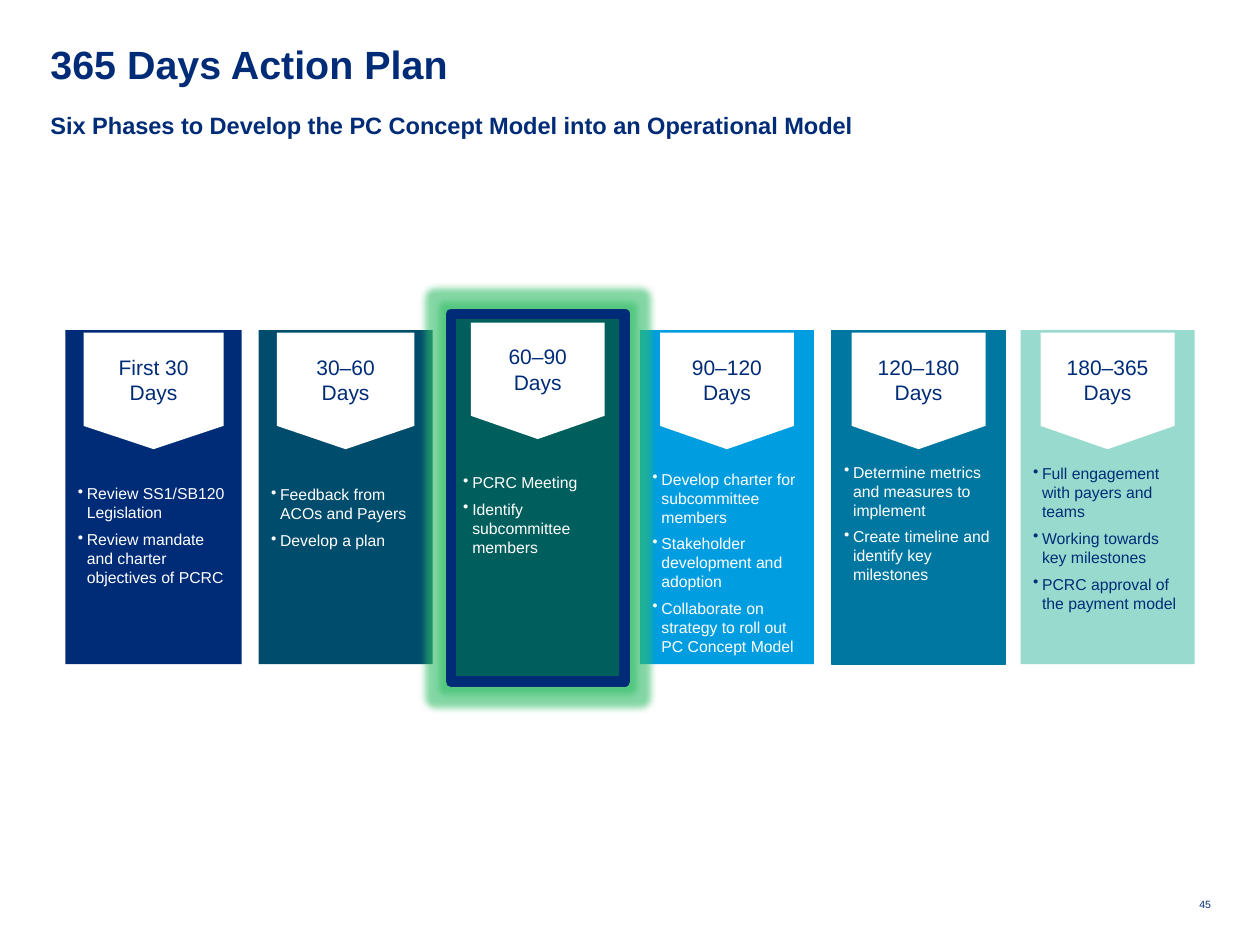
from pptx import Presentation
from pptx.dml.color import RGBColor
from pptx.enum.shapes import MSO_SHAPE
from pptx.enum.text import MSO_ANCHOR, PP_ALIGN
from pptx.oxml import parse_xml
from pptx.oxml.ns import nsdecls, qn
from pptx.util import Pt

RECT = MSO_SHAPE.RECTANGLE
CHEVRON = MSO_SHAPE.FLOWCHART_OFFPAGE_CONNECTOR
TOP, MIDDLE = MSO_ANCHOR.TOP, MSO_ANCHOR.MIDDLE
LEFT, CENTER, RIGHT = PP_ALIGN.LEFT, PP_ALIGN.CENTER, PP_ALIGN.RIGHT

COLORS = {
    "navy": "002C77", "slate": "004C6C", "green": "005E5D", "sky": "009DE0",
    "teal": "0077A0", "mint": "98DBCE", "white": "FFFFFF", "glow": "33BD68",
}
FONT = "Arial"
PANEL_TOP, PANEL_H = 188.7, 190.8
HIGHLIGHT_TOP, HIGHLIGHT_H = 179.3, 210.2
CHEVRON_H = 66.6

# left, width, colour, chevron width, top of text in panel, heading, bullets
PHASES = [
    (37.4, 100.8, "navy", 80, 88, "First 30\vDays",
     ["Review SS1/SB120 Legislation",
      "Review mandate and charter objectives of PCRC"]),
    (147.8, 99.4, "slate", 78.5, 88.5, "30–60\vDays",
     ["Feedback from ACOs and Payers", "Develop a plan"]),
    (257.6, 99.4, "green", 76.5, 91, "60–90\vDays",
     ["PCRC Meeting", "Identify subcommittee members"]),
    (365.7, 99.4, "sky", 76.5, 79.5, "90–120\vDays",
     ["Develop charter for subcommittee members",
      "Stakeholder development and adoption",
      "Collaborate on strategy to roll out PC Concept Model"]),
    (475.2, 99.4, "teal", 76.5, 75.5, "120–180\vDays",
     ["Determine metrics and measures to implement",
      "Create timeline and identify key milestones"]),
    (583.2, 99.4, "mint", 76.5, 76.5, "180–365\vDays",
     ["Full engagement with payers and teams",
      "Working towards key milestones",
      "PCRC approval of the payment model"]),
]
HIGHLIGHT = 2


def rgb(name):
    return RGBColor.from_string(COLORS[name])


def write(tf, lines, size, color="navy", bold=False, align=LEFT, anchor=TOP,
          insets=(0, 0, 0, 0), after=0, spacing=None, bullet=False):
    tf.word_wrap = True
    tf.vertical_anchor = anchor
    tf.margin_left, tf.margin_top, tf.margin_right, tf.margin_bottom = map(Pt, insets)
    for i, line in enumerate(lines):
        p = tf.paragraphs[0] if i == 0 else tf.add_paragraph()
        p.text = line
        p.alignment = align
        p.space_before, p.space_after = Pt(0), Pt(after)
        if spacing:
            p.line_spacing = spacing
        pPr = p._p.get_or_add_pPr()
        indent = Pt(5.2) if bullet else 0
        pPr.set("marL", str(indent))
        pPr.set("indent", str(-indent))
        mark = '<a:buChar %s char="•"/>' if bullet else "<a:buNone %s/>"
        pPr.append(parse_xml(mark % nsdecls("a")))
        for r in p.runs:
            r.font.name, r.font.size, r.font.bold = FONT, Pt(size), bold
            r.font.color.rgb = rgb(color)


class Deck:
    def __init__(self, prs):
        self.s = prs.slides.add_slide(prs.slide_layouts[1])

    def placeholder(self, idx, box, text, size, **style):
        sp = self.s.placeholders[idx]
        sp.left, sp.top, sp.width, sp.height = map(Pt, box)
        write(sp.text_frame, [text], size, bold=True, **style)

    def label(self, box, text, size, **style):
        sp = self.s.shapes.add_textbox(*map(Pt, box))
        write(sp.text_frame, [text], size, **style)

    def shape(self, kind, box, fill, lines, size, line=None, **style):
        sp = self.s.shapes.add_shape(kind, *map(Pt, box))
        sp.shadow.inherit = False
        sp.fill.solid()
        sp.fill.fore_color.rgb = rgb(fill)
        if line:
            color, width = line
            sp.line.color.rgb = rgb(color)
            sp.line.width = Pt(width)
        else:
            sp.line.fill.background()
        write(sp.text_frame, lines, size, **style)
        return sp

    def glow(self, sp, color, radius, alpha):
        spPr = sp._element.spPr
        spPr.find(qn("a:ln")).append(parse_xml("<a:round %s/>" % nsdecls("a")))
        spPr.find(qn("a:effectLst")).append(parse_xml(
            f'<a:glow {nsdecls("a")} rad="{Pt(radius)}">'
            f'<a:srgbClr val="{COLORS[color]}"><a:alpha val="{alpha * 1000}"/>'
            '</a:srgbClr></a:glow>'))


def main():
    prs = Presentation()
    prs.slide_width, prs.slide_height = Pt(720), Pt(540)
    deck = Deck(prs)

    # Headings and page number
    deck.placeholder(0, (28.8, 28, 663, 38.9), "365 Days Action Plan", 22.5, spacing=0.8)
    deck.placeholder(1, (28.8, 63.4, 663, 25.2),
                     "Six Phases to Develop the PC Concept Model into an Operational Model",
                     13.5, after=4.5)
    deck.label((675.4, 513.4, 16.6, 7.2), "45", 6, align=RIGHT)

    # Phase panels, the highlighted one last so that its glow lies on top
    for i in sorted(range(len(PHASES)), key=lambda n: n == HIGHLIGHT):
        left, width, color, _, text_top, _, bullets = PHASES[i]
        top, height, line = PANEL_TOP, PANEL_H, None
        if i == HIGHLIGHT:
            top, height, line = HIGHLIGHT_TOP, HIGHLIGHT_H, ("navy", 6)
        elif color == "teal":
            line = ("teal", 0.75)
        panel = deck.shape(RECT, (left, top, width, height), color, bullets, 9,
                           line=line, color="navy" if color == "mint" else "white",
                           insets=(7.2, text_top, 7.2, 0), after=4.5, bullet=True)
        if i == HIGHLIGHT:
            deck.glow(panel, "glow", 8, 60)

    # Chevrons centred on their panels
    for i, (left, width, _, chevron_w, _, heading, _) in enumerate(PHASES):
        top = HIGHLIGHT_TOP + 5 if i == HIGHLIGHT else PANEL_TOP + 1.4
        deck.shape(CHEVRON, (left + (width - chevron_w) / 2, top, chevron_w, CHEVRON_H),
                   "white", [heading], 12, align=CENTER, anchor=MIDDLE,
                   insets=(7.2, 3.6, 7.2, 3.6))

    prs.save("out.pptx")


if __name__ == "__main__":
    main()
